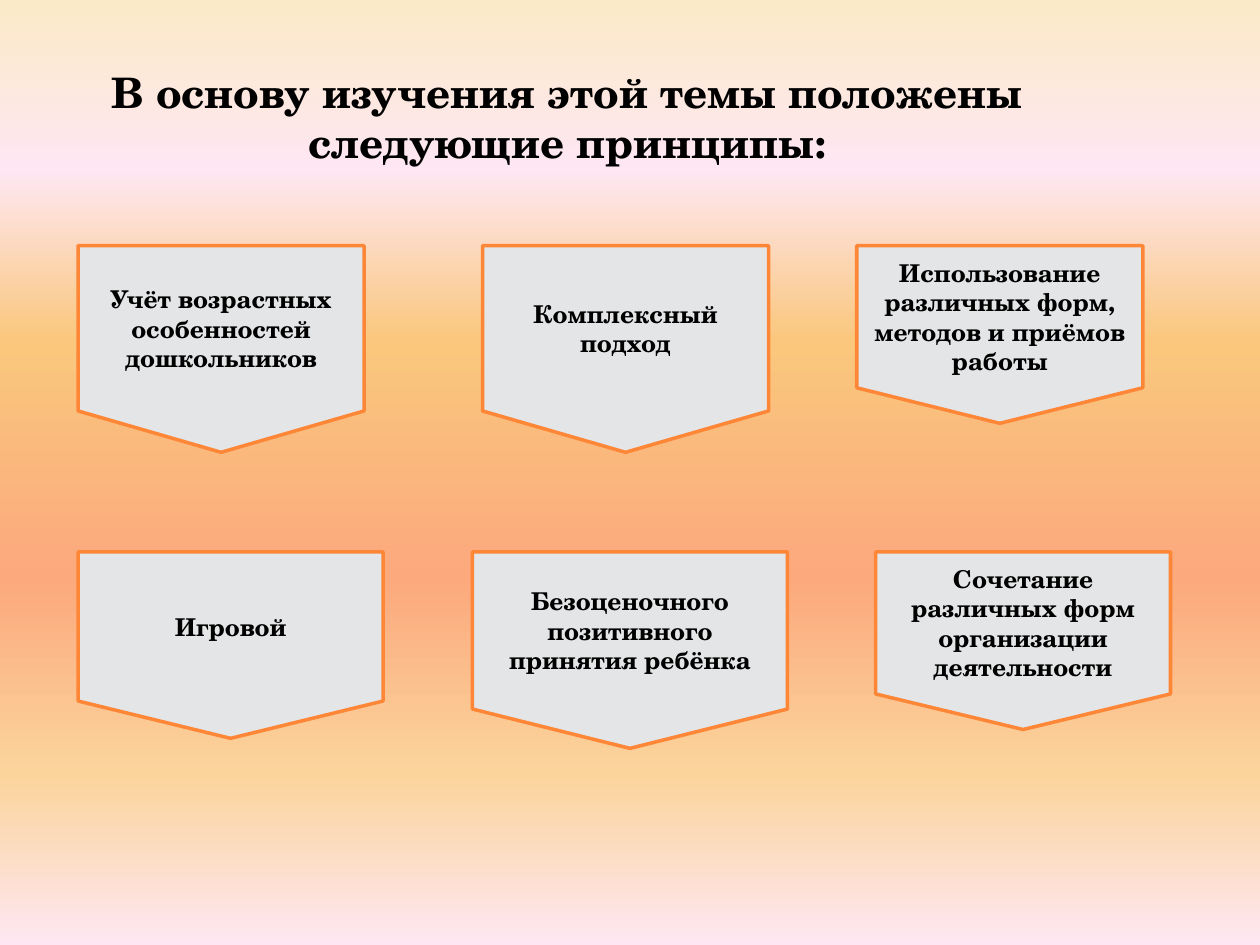
import pptx
import pptx.util
import pptx.dml.color
import pptx.enum.shapes
import pptx.enum.text
import pptx.oxml.ns
import lxml.etree

TITLE = "В основу изучения этой темы положены следующие принципы:"
PRINCIPLES = [
    [("Учёт возрастных особенностей дошкольников", 0.62, 2.27, 1.64),
     ("Комплексный подход", 3.83, 2.27, 1.64),
     ("Использование различных форм, методов и приёмов работы", 6.8, 2.27, 1.41)],
    [("Игровой", 0.62, 2.42, 1.48),
     ("Безоценочного позитивного принятия ребёнка", 3.75, 2.5, 1.56),
     ("Сочетание различных форм организации деятельности", 6.95, 2.34, 1.41)],
]
WIDTH, HEIGHT = 10, 7.5
TITLE_BOX = (0, 0.04 * HEIGHT, 0.9 * WIDTH, HEIGHT / 6)
ROW_TOP, ROW_STEP = 0.26 * HEIGHT, 0.324 * HEIGHT

RGB = pptx.dml.color.RGBColor.from_string
THEME = {
    "fill": RGB("E4E5E6"),
    "line": RGB("FE8637"),
    "line_width": pptx.util.Pt(2),
    "title": {"size": pptx.util.Pt(24)},
    "body": {"size": pptx.util.Pt(14)},
    "font": {"name": "TeX Gyre Schola", "bold": True},
    "text": RGB("000000"),
    "background": [(0, "FBEAC7"), (18, "FEE7F2"), (36, "FAC77D"),
                   (61, "FBA97D"), (82, "FBD49C"), (100, "FEE7F2")],
}
FRAME = {"word_wrap": True, "vertical_anchor": pptx.enum.text.MSO_ANCHOR.MIDDLE}


def inches(*values):
    return [pptx.util.Inches(v) for v in values]


def apply(target, values):
    for name, value in values.items():
        setattr(target, name, value)


def write(sp, text, style):
    tf = sp.text_frame
    apply(tf, FRAME)
    p = tf.paragraphs[0]
    p.alignment = pptx.enum.text.PP_ALIGN.CENTER
    r = p.add_run()
    r.text = text
    apply(r.font, THEME["font"] | THEME[style])
    r.font.color.rgb = THEME["text"]


def paint_background(s):
    fill = s.background.fill
    fill.gradient()
    fill.gradient_angle = 270
    qn = pptx.oxml.ns.qn
    stops = next(s.element.iter(qn("a:gsLst")))
    for old in list(stops):
        stops.remove(old)
    for percent, color in THEME["background"]:
        stop = lxml.etree.SubElement(stops, qn("a:gs"), pos=str(percent * 1000))
        lxml.etree.SubElement(stop, qn("a:srgbClr"), val=color)


def add_principle(s, text, left, top, width, height):
    sp = s.shapes.add_shape(
        pptx.enum.shapes.MSO_SHAPE.FLOWCHART_OFFPAGE_CONNECTOR,
        *inches(left, top, width, height))
    sp.shadow.inherit = False
    sp.fill.solid()
    sp.fill.fore_color.rgb = THEME["fill"]
    sp.line.color.rgb = THEME["line"]
    sp.line.width = THEME["line_width"]
    write(sp, text, "body")


def main():
    prs = pptx.Presentation()
    prs.slide_width, prs.slide_height = inches(WIDTH, HEIGHT)
    s = prs.slides.add_slide(prs.slide_layouts[6])
    paint_background(s)
    write(s.shapes.add_textbox(*inches(*TITLE_BOX)), TITLE, "title")
    for row, principles in enumerate(PRINCIPLES):
        top = ROW_TOP + row * ROW_STEP
        for text, left, width, height in principles:
            add_principle(s, text, left, top, width, height)
    prs.save("out.pptx")


if __name__ == "__main__":
    main()
